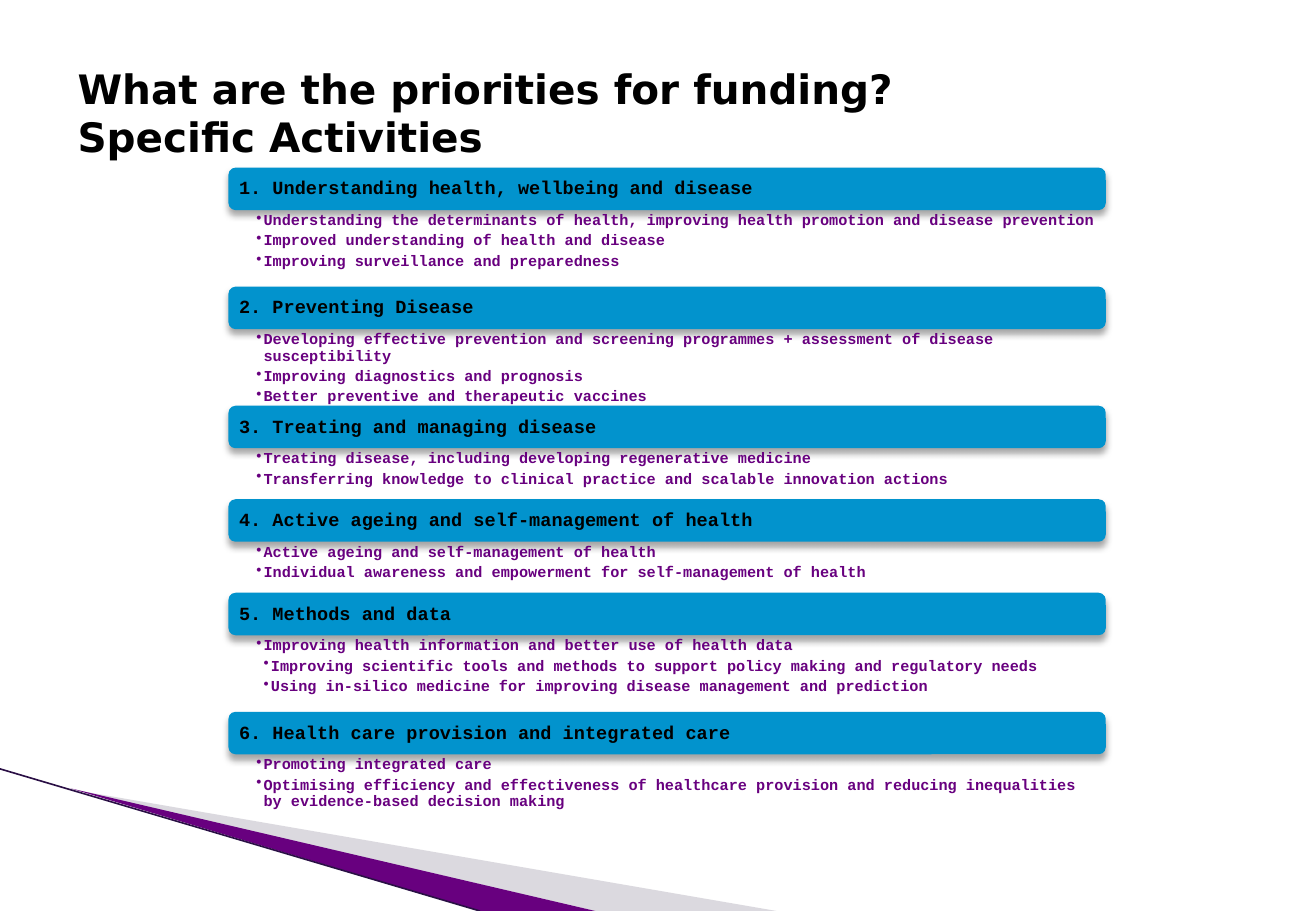
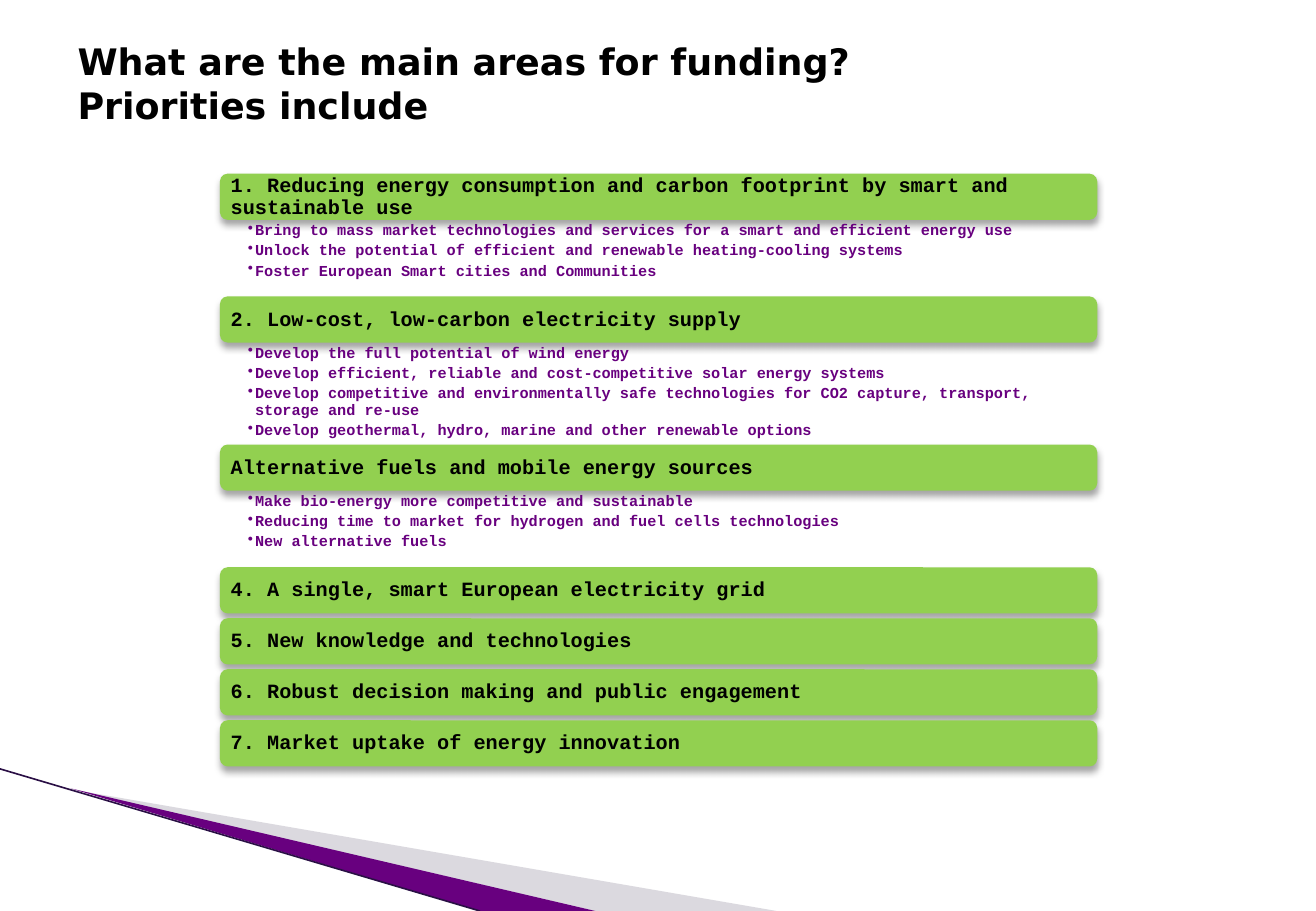
from dataclasses import dataclass

from lxml.etree import SubElement
from pptx import Presentation
from pptx.dml.color import RGBColor
from pptx.enum.shapes import MSO_CONNECTOR, MSO_SHAPE
from pptx.enum.text import MSO_ANCHOR, PP_ALIGN
from pptx.oxml.ns import qn
from pptx.util import Inches, Pt


@dataclass(frozen=True)
class Theme:
    heading_font: str = "DejaVu Sans"
    body_font: str = "Courier New"
    ink: str = "000000"
    purple: str = "68007F"
    grey: str = "A7A2B1"
    edge: str = "2A0F45"
    blue: str = "0293CD"
    green: str = "92D050"
    bullet_size: float = 9
    bullet_gap: float = 2.3
    line_spacing: float = 0.9


BAR_WIDTH = 7.22
BULLET_ROW = 0.21
BAR_GAP = 0.04
INDENT = 0.06


class Deck:
    def __init__(self, theme):
        self.theme = theme
        self.prs = Presentation()
        self.prs.slide_width = Inches(10.83)
        self.prs.slide_height = Inches(7.5)
        self.s = None

    def new_slide(self):
        self.s = self.prs.slides.add_slide(self.prs.slide_layouts[6])
        t = self.theme
        self.wedge([(0.59, 6.5), (6.39, 7.5), (4.9, 7.5)], t.grey, 40)
        self.wedge([(0.58, 6.49), (4.9, 7.5), (3.95, 7.5)], t.purple)
        self.line(0, 6.33, 3.95, 7.5, t.edge, 0.95)

    def wedge(self, points, color, opacity=100):
        pts = [(Inches(x), Inches(y)) for x, y in points]
        fb = self.s.shapes.build_freeform(*pts[0])
        fb.add_line_segments(pts[1:], close=True)
        sp = fb.convert_to_shape()
        self.paint(sp, color)
        if opacity < 100:
            clr = sp.fill._xPr.find(qn("a:solidFill"))[0]
            SubElement(clr, qn("a:alpha"), val=str(opacity * 1000))

    def line(self, x1, y1, x2, y2, color, width):
        cn = self.s.shapes.add_connector(
            MSO_CONNECTOR.STRAIGHT, Inches(x1), Inches(y1), Inches(x2), Inches(y2))
        cn.line.color.rgb = RGBColor.from_string(color)
        cn.line.width = Pt(width)
        SubElement(cn._element.spPr, qn("a:effectLst"))

    def paint(self, sp, color):
        sp.shadow.inherit = False
        sp.fill.solid()
        sp.fill.fore_color.rgb = RGBColor.from_string(color)
        sp.line.fill.background()

    def drop_shadow(self, sp):
        effects = sp._element.spPr.find(qn("a:effectLst"))
        shadow = SubElement(effects, qn("a:outerShdw"), blurRad=str(Pt(4)),
                            dist=str(Pt(3)), dir="5400000", rotWithShape="0")
        clr = SubElement(shadow, qn("a:srgbClr"), val=self.theme.ink)
        SubElement(clr, qn("a:alpha"), val="35000")

    def frame(self, sp, anchor, insets=(0.1, 0.05, 0.1, 0.05)):
        tf = sp.text_frame
        tf.word_wrap = True
        tf.vertical_anchor = anchor
        tf.margin_left, tf.margin_top, tf.margin_right, tf.margin_bottom = map(Inches, insets)
        return tf

    def run(self, p, text, font, size, color):
        r = p.add_run()
        r.text = text
        r.font.name = font
        r.font.size = Pt(size)
        r.font.bold = True
        r.font.color.rgb = RGBColor.from_string(color)

    def title(self, lines, height, size):
        sp = self.s.shapes.add_textbox(Inches(0.54), Inches(0.3), Inches(8.54), Inches(height))
        p = self.frame(sp, MSO_ANCHOR.MIDDLE).paragraphs[0]
        for i, text in enumerate(lines):
            if i:
                p.add_line_break()
            self.run(p, text, self.theme.heading_font, size, self.theme.ink)

    def bar(self, text, x, y, height, color, size):
        sp = self.s.shapes.add_shape(MSO_SHAPE.ROUNDED_RECTANGLE, Inches(x), Inches(y),
                                     Inches(BAR_WIDTH), Inches(height))
        self.paint(sp, color)
        self.drop_shadow(sp)
        p = self.frame(sp, MSO_ANCHOR.MIDDLE, (0.07, 0.02, 0.07, 0.02)).paragraphs[0]
        p.alignment = PP_ALIGN.LEFT
        p.line_spacing = self.theme.line_spacing
        self.run(p, text, self.theme.body_font, size, self.theme.ink)

    def bullets(self, items, x, y, height):
        t = self.theme
        sp = self.s.shapes.add_textbox(Inches(x), Inches(y), Inches(BAR_WIDTH), Inches(height))
        tf = self.frame(sp, MSO_ANCHOR.TOP, (0.23, 0.02, 0.09, 0.02))
        for i, item in enumerate(items):
            text, level = item if isinstance(item, tuple) else (item, 1)
            p = tf.paragraphs[0] if i == 0 else tf.add_paragraph()
            pPr = p._p.get_or_add_pPr()
            pPr.set("marL", str(Inches(INDENT * level)))
            pPr.set("indent", str(-Inches(INDENT)))
            SubElement(pPr, qn("a:buChar"), char="•")
            p.level = level
            p.line_spacing = t.line_spacing
            p.space_after = Pt(t.bullet_gap)
            self.run(p, text, t.body_font, t.bullet_size, t.purple)

    def sections(self, groups, x, y, bar_height, color, size):
        for heading, items in groups:
            self.bar(heading, x, y, bar_height, color, size)
            y += bar_height
            if items:
                height = BULLET_ROW * len(items)
                self.bullets(items, x, y, height)
                y += height
            else:
                y += BAR_GAP


HEALTH = [
    ("1. Understanding health, wellbeing and disease", [
        "Understanding the determinants of health, improving health promotion and disease prevention",
        "Improved understanding of health and disease",
        "Improving surveillance and preparedness"]),
    ("2. Preventing Disease", [
        "Developing effective prevention and screening programmes + assessment of disease susceptibility",
        "Improving diagnostics and prognosis",
        "Better preventive and therapeutic vaccines"]),
    ("3. Treating and managing disease", [
        "Treating disease, including developing regenerative medicine",
        "Transferring knowledge to clinical practice and scalable innovation actions"]),
    ("4. Active ageing and self-management of health", [
        "Active ageing and self-management of health",
        "Individual awareness and empowerment for self-management of health"]),
    ("5. Methods and data", [
        "Improving health information and better use of health data",
        ("Improving scientific tools and methods to support policy making and regulatory needs", 2),
        ("Using in-silico medicine for improving disease management and prediction", 2)]),
    ("6. Health care provision and integrated care", [
        "Promoting integrated care",
        "Optimising efficiency and effectiveness of healthcare provision and reducing "
        "inequalities by evidence-based decision making"]),
]

ENERGY = [
    ("1. Reducing energy consumption and carbon footprint by smart and sustainable use", [
        "Bring to mass market technologies and services for a smart and efficient energy use",
        "Unlock the potential of efficient and renewable heating-cooling systems",
        "Foster European Smart cities and Communities"]),
    ("2. Low-cost, low-carbon electricity supply", [
        "Develop the full potential of wind energy",
        "Develop efficient, reliable and cost-competitive solar energy systems",
        "Develop competitive and environmentally safe technologies for CO2 capture, "
        "transport, storage and re-use",
        "Develop geothermal, hydro, marine and other renewable options"]),
    ("Alternative fuels and mobile energy sources", [
        "Make bio-energy more competitive and sustainable",
        "Reducing time to market for hydrogen and fuel cells technologies",
        "New alternative fuels"]),
    ("4. A single, smart European electricity grid", []),
    ("5. New knowledge and technologies", []),
    ("6. Robust decision making and public engagement", []),
    ("7. Market uptake of energy innovation", []),
]


def main():
    theme = Theme()
    deck = Deck(theme)

    deck.new_slide()
    deck.title(["What are the priorities for funding?", "Specific Activities"], 1.25, 24)
    deck.sections(HEALTH, 1.88, 1.38, 0.35, theme.blue, 11)

    deck.new_slide()
    deck.title(["What are the main areas for funding?", "Priorities include"], 0.77, 21.6)
    deck.sections(ENERGY, 1.81, 1.43, 0.38, theme.green, 12)

    deck.prs.save("out.pptx")


if __name__ == "__main__":
    main()
